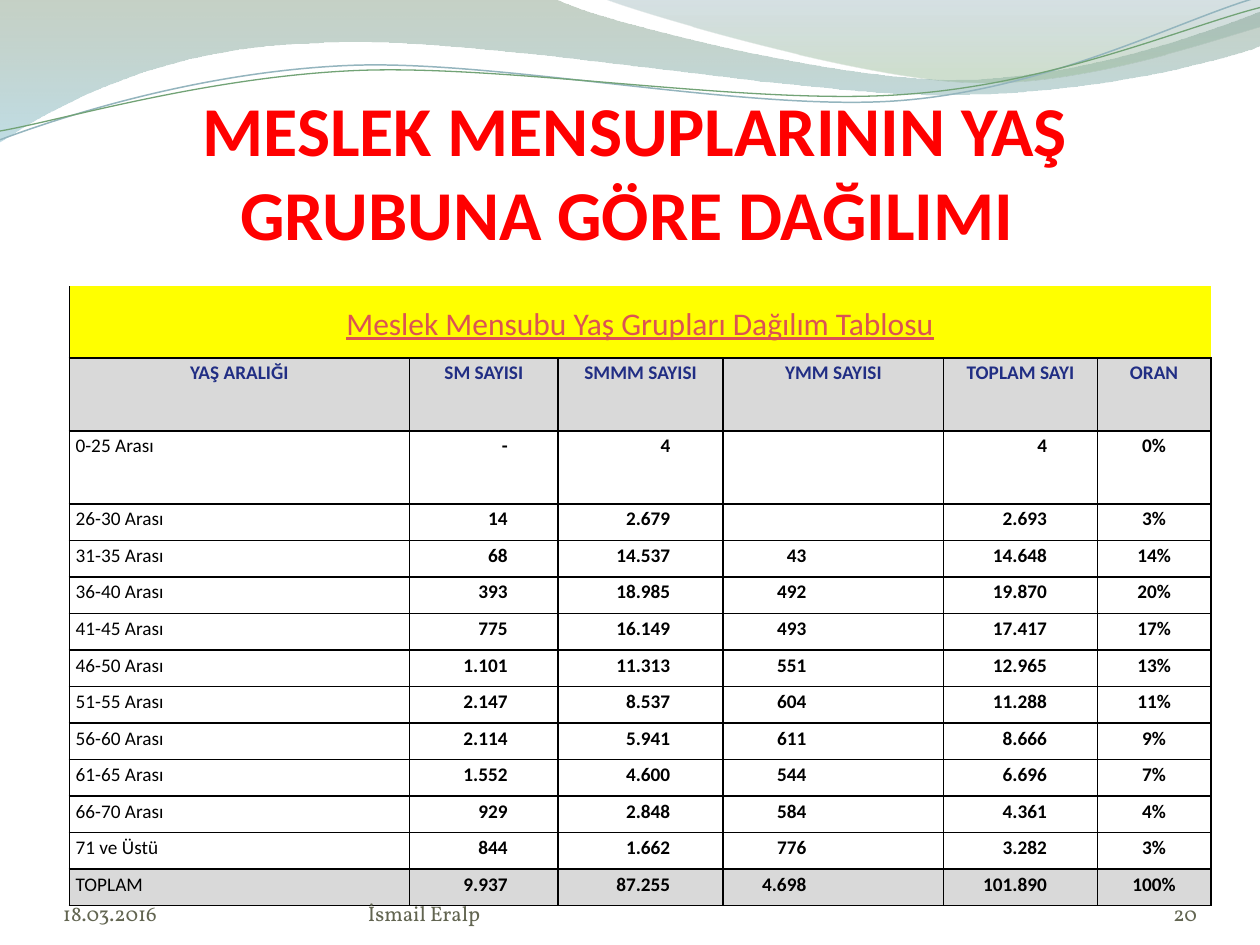
from dataclasses import dataclass

from lxml.etree import SubElement
from pptx import Presentation
from pptx.dml.color import RGBColor
from pptx.enum.text import MSO_ANCHOR, MSO_AUTO_SIZE, PP_ALIGN
from pptx.oxml.ns import qn
from pptx.util import Inches, Pt


@dataclass(frozen=True)
class Theme:
    body_font: str = "Calibri"
    footer_font: str = "Vollkorn"
    title_color: str = "FF0000"
    caption_color: str = "DB5353"
    caption_fill: str = "FFFF00"
    header_color: str = "212E84"
    header_fill: str = "D9D9D9"
    text_color: str = "000000"
    footer_color: str = "626551"
    title_size: int = 40
    caption_size: int = 18
    table_size: int = 11
    footer_size: int = 12


theme = Theme()


def add_text(paragraph, text, font_name, size, color, bold=False):
    run = paragraph.add_run()
    run.text = text
    run.font.name = font_name
    run.font.size = Pt(size)
    run.font.bold = bold
    run.font.color.rgb = RGBColor.from_string(color)
    return run


def add_wave(shapes, start, segments, closed):
    points = [
        (Inches(segment[i]), Inches(segment[i + 1]))
        for segment in segments for i in range(0, len(segment), 2)
    ]
    builder = shapes.build_freeform(Inches(start[0]), Inches(start[1]))
    builder.add_line_segments(points, close=closed)
    shape = builder.convert_to_shape()
    shape.shadow.inherit = False
    lines = iter(list(shape.element.spPr.iter(qn("a:lnTo"))))
    for segment in segments:
        first = next(lines)
        if len(segment) == 6:
            first.tag = qn("a:cubicBezTo")
            for line in (next(lines), next(lines)):
                first.append(line[0])
                line.getparent().remove(line)
    return shape


presentation = Presentation()
presentation.slide_width = Inches(10)
presentation.slide_height = Inches(7.5)
slide = presentation.slides.add_slide(presentation.slide_layouts[5])

bands = [
    ((0, 0),
     [(4.4, -0.01), (4.76, 0.17, 6.64, 0.63, 7.58, 0.63), (8.53, 0.63, 9.58, 0.26, 10, 0.09),
      (10.01, 0.36), (9.83, 0.44, 8.7, 0.76, 7.46, 0.75), (6.22, 0.75, 3.82, 0.28, 2.57, 0.34),
      (1.29, 0.36, 0.46, 0.83, -0.01, 1.13)],
     [(0, "809980", 45), (1, "8DC1CF", 55)]),
    ((4.79, -0.01),
     [(5.09, 0.11, 6.82, 0.62, 7.69, 0.65), (8.56, 0.69, 9.61, 0.32, 10, 0.21), (10, 0)],
     [(0, "779BA4", 30), (0.8, "96B996", 45)]),
]
for start, segments, stops in bands:
    band = add_wave(slide.shapes, start, segments, True)
    band.line.fill.background()
    band.fill.gradient()
    band.fill.gradient_angle = 270
    for gradient_stop, (position, color, _) in zip(band.fill.gradient_stops, stops):
        gradient_stop.position = position
        gradient_stop.color.rgb = RGBColor.from_string(color)
    for color_element, (_, _, opacity) in zip(band.element.spPr.iter(qn("a:srgbClr")), stops):
        SubElement(color_element, qn("a:alpha"), val=str(opacity * 1000))

curves = [
    ((0, 1.11),
     [(0.48, 0.93, 1.58, 0.57, 2.77, 0.52), (3.95, 0.47, 5.93, 0.89, 7.13, 0.8),
      (8.33, 0.71, 9.38, 0.15, 9.98, -0.02)],
     "94B5BE", 0.85),
    ((0, 1.04),
     [(0.47, 0.96, 1.64, 0.61, 2.83, 0.56), (4.03, 0.51, 5.97, 0.84, 7.17, 0.75),
      (8.36, 0.67, 9.41, 0.21, 10, 0.06)],
     "72A376", 0.75),
]
for start, segments, color, width in curves:
    curve = add_wave(slide.shapes, start, segments, False)
    curve.fill.background()
    curve.line.color.rgb = RGBColor.from_string(color)
    curve.line.width = Pt(width)

title = slide.shapes.title
title.element.getparent().append(title.element)
title.left, title.top, title.width, title.height = map(Inches, (0.5, 0.77, 9.08, 1.25))
title_frame = title.text_frame
title_frame.word_wrap = True
title_frame.auto_size = MSO_AUTO_SIZE.NONE
title_frame.vertical_anchor = MSO_ANCHOR.BOTTOM
title_frame.margin_left = title_frame.margin_right = title_frame.margin_bottom = 0
title_frame.margin_top = Inches(0.05)
title_paragraph = title_frame.paragraphs[0]
title_paragraph.alignment = PP_ALIGN.CENTER
add_text(title_paragraph, "MESLEK MENSUPLARININ YAŞ GRUBUNA GÖRE DAĞILIMI ",
         theme.body_font, theme.title_size, theme.title_color, True)

rows = [
    ["Meslek Mensubu Yaş Grupları Dağılım Tablosu", "", "", "", "", ""],
    ["YAŞ ARALIĞI", "SM SAYISI", "SMMM SAYISI", "YMM SAYISI", "TOPLAM SAYI", "ORAN"],
    ["0-25 Arası", "-", "4", "", "4", "0%"],
    ["26-30 Arası", "14", "2.679", "", "2.693", "3%"],
    ["31-35 Arası", "68", "14.537", "43", "14.648", "14%"],
    ["36-40 Arası", "393", "18.985", "492", "19.870", "20%"],
    ["41-45 Arası", "775", "16.149", "493", "17.417", "17%"],
    ["46-50 Arası", "1.101", "11.313", "551", "12.965", "13%"],
    ["51-55 Arası", "2.147", "8.537", "604", "11.288", "11%"],
    ["56-60 Arası", "2.114", "5.941", "611", "8.666", "9%"],
    ["61-65 Arası", "1.552", "4.600", "544", "6.696", "7%"],
    ["66-70 Arası", "929", "2.848", "584", "4.361", "4%"],
    ["71 ve Üstü", "844", "1.662", "776", "3.282", "3%"],
    ["TOPLAM", "9.937", "87.255", "4.698", "101.890", "100%"],
]
column_widths = [2.7, 1.18, 1.31, 1.75, 1.22, 0.9]
row_heights = [0.57, 0.58, 0.58] + [0.29] * 11
right_margins = [0.05, 0.4, 0.42, 1.09, 0.4, 0.05]
alignments = [PP_ALIGN.LEFT] + [PP_ALIGN.RIGHT] * 4 + [PP_ALIGN.CENTER]

table = slide.shapes.add_table(
    len(rows), len(column_widths), Inches(0.55), Inches(2.27),
    Inches(sum(column_widths)), Inches(sum(row_heights))).table
table.first_row = False
table.horz_banding = False
for column, width in zip(table.columns, column_widths):
    column.width = Inches(width)
for table_row, height in zip(table.rows, row_heights):
    table_row.height = Inches(height)
table.cell(0, 0).merge(table.cell(0, len(column_widths) - 1))

for row_index, row in enumerate(rows):
    is_caption = row_index == 0
    is_header = row_index == 1
    for column_index, text in enumerate(row):
        cell = table.cell(row_index, column_index)
        centered = row_index < 2
        cell.margin_left = Inches(0.05)
        cell.margin_right = Inches(0.05 if centered else right_margins[column_index])
        cell.margin_top = cell.margin_bottom = 0
        cell.vertical_anchor = MSO_ANCHOR.MIDDLE if is_caption else MSO_ANCHOR.TOP

        properties = cell._tc.get_or_add_tcPr()
        for side in ("L", "R", "T", "B"):
            border = SubElement(properties, qn(f"a:ln{side}"), w=str(Pt(1)))
            hidden = is_caption and (side in "RT" or (side == "L" and column_index > 0))
            if hidden:
                SubElement(border, qn("a:noFill"))
            else:
                border_fill = SubElement(border, qn("a:solidFill"))
                SubElement(border_fill, qn("a:srgbClr"), val=theme.text_color)
        if is_caption or is_header or row_index == len(rows) - 1:
            cell.fill.solid()
            cell.fill.fore_color.rgb = RGBColor.from_string(
                theme.caption_fill if is_caption else theme.header_fill)
        else:
            cell.fill.background()

        paragraph = cell.text_frame.paragraphs[0]
        paragraph.alignment = PP_ALIGN.CENTER if centered else alignments[column_index]
        paragraph.line_spacing = 1.15
        if not text:
            SubElement(paragraph._p, qn("a:endParaRPr"), sz=str(theme.table_size * 100))
        elif is_caption:
            run = add_text(paragraph, text, theme.body_font, theme.caption_size, theme.caption_color)
            run.font.underline = True
        else:
            add_text(paragraph, text, theme.body_font, theme.table_size,
                     theme.header_color if is_header else theme.text_color,
                     is_header or column_index > 0)

footers = [
    ("20", 8.67, 0.83, PP_ALIGN.RIGHT),
    ("18.03.2016", 0.5, 2.33, PP_ALIGN.LEFT),
    ("İsmail Eralp", 2.92, 3.67, PP_ALIGN.LEFT),
]
for text, left, width, alignment in footers:
    footer = slide.shapes.add_textbox(Inches(left), Inches(6.95), Inches(width), Inches(0.4))
    frame = footer.text_frame
    frame.word_wrap = True
    frame.vertical_anchor = MSO_ANCHOR.BOTTOM
    frame.margin_left = frame.margin_right = frame.margin_top = frame.margin_bottom = 0
    paragraph = frame.paragraphs[0]
    paragraph.alignment = alignment
    add_text(paragraph, text, theme.footer_font, theme.footer_size, theme.footer_color)

presentation.save("out.pptx")
